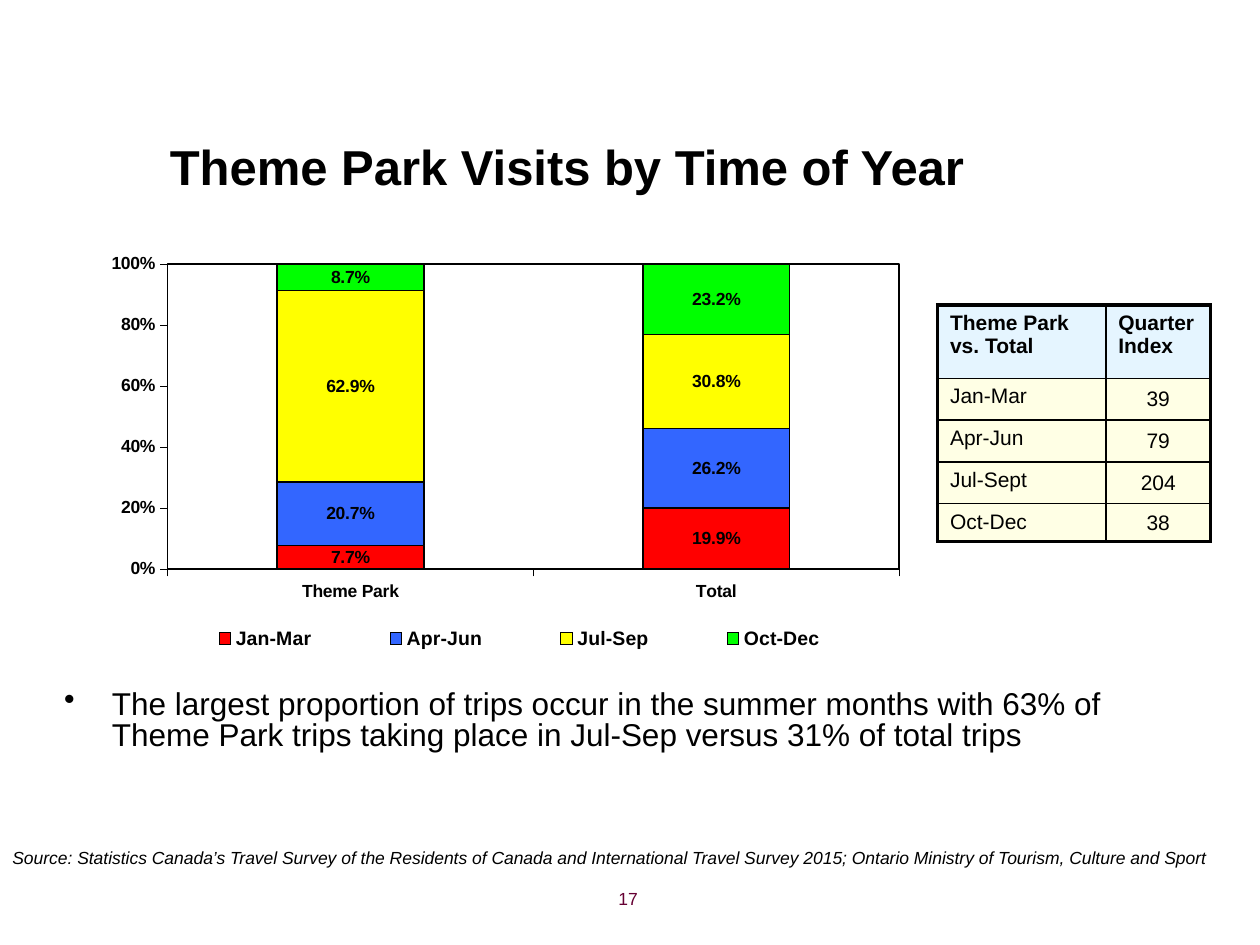
from dataclasses import dataclass

from lxml import etree
from pptx import Presentation
from pptx.chart.data import CategoryChartData
from pptx.dml.color import RGBColor
from pptx.enum.chart import XL_CHART_TYPE, XL_LEGEND_POSITION, XL_TICK_MARK
from pptx.enum.text import MSO_ANCHOR, PP_ALIGN
from pptx.oxml import parse_xml
from pptx.oxml.ns import nsdecls, qn
from pptx.util import Inches, Pt

LEFT, CENTER, RIGHT = PP_ALIGN.LEFT, PP_ALIGN.CENTER, PP_ALIGN.RIGHT
TOP, MIDDLE = MSO_ANCHOR.TOP, MSO_ANCHOR.MIDDLE
STACKED_100 = XL_CHART_TYPE.COLUMN_STACKED_100
BOTTOM = XL_LEGEND_POSITION.BOTTOM
OUTSIDE = XL_TICK_MARK.OUTSIDE


@dataclass(frozen=True)
class Theme:
    font: str = "Arial"
    ink: str = "000000"
    number: str = "660033"
    header: str = "CCECFF"
    body: str = "FFFFCC"
    quarters: tuple = ("FF0000", "3366FF", "FFFF00", "00FF00")
    title_size: float = 28
    bullet_size: float = 18
    table_size: float = 12
    legend_size: float = 11.1
    small_size: float = 10
    thin: float = 0.25
    line: float = 1
    frame: float = 2.25


THEME = Theme()
WIDTH, HEIGHT = Inches(10), Inches(7.5)

SHARES = {
    "Jan-Mar": (0.077, 0.199),
    "Apr-Jun": (0.207, 0.262),
    "Jul-Sep": (0.629, 0.308),
    "Oct-Dec": (0.087, 0.232),
}
INDEX_ROWS = [
    ("Theme Park vs. Total", "Quarter Index"),
    ("Jan-Mar", "39"),
    ("Apr-Jun", "79"),
    ("Jul-Sept", "204"),
    ("Oct-Dec", "38"),
]


def area(left, top, width, height):
    return (int(WIDTH * left / 100), int(HEIGHT * top / 100),
            int(WIDTH * width / 100), int(HEIGHT * height / 100))


def format_font(font, size, bold=False, italic=False, color=THEME.ink):
    font.name, font.size = THEME.font, Pt(size)
    font.bold, font.italic = bold, italic
    font.color.rgb = RGBColor.from_string(color)


def write(tf, text, size, align=LEFT, anchor=TOP, bullet=False, **style):
    tf.word_wrap = True
    tf.vertical_anchor = anchor
    p = tf.paragraphs[0]
    p.alignment = align
    if bullet:
        pPr = p._p.get_or_add_pPr()
        pPr.set("marL", str(Inches(0.38)))
        pPr.set("indent", str(Inches(-0.38)))
        etree.SubElement(pPr, qn("a:buChar")).set("char", "•")
        p.line_spacing = 0.8
    r = p.add_run()
    r.text = text
    format_font(r.font, size, **style)


def add_text(s, box, text, size, **style):
    write(s.shapes.add_textbox(*box).text_frame, text, size, **style)


def add_title(s, box, text):
    title = s.shapes.title
    title.left, title.top, title.width, title.height = box
    write(title.text_frame, text, THEME.title_size, align=CENTER,
          anchor=MIDDLE, bold=True)


def outline(line, width):
    line.color.rgb = RGBColor.from_string(THEME.ink)
    line.width = Pt(width)


def layout_xml(x, y, w, h, inner=False):
    target = '<c:layoutTarget val="inner"/>' if inner else ""
    return parse_xml(
        f'<c:layout {nsdecls("c")}><c:manualLayout>{target}'
        '<c:xMode val="edge"/><c:yMode val="edge"/>'
        f'<c:x val="{x}"/><c:y val="{y}"/><c:w val="{w}"/><c:h val="{h}"/>'
        '</c:manualLayout></c:layout>')


def place_plot(chart):
    plot_area = chart._chartSpace.chart.plotArea
    for old in plot_area.findall(qn("c:layout")):
        plot_area.remove(old)
    plot_area.insert(0, layout_xml(0.105, 0.033, 0.884, 0.637, inner=True))
    plot_area.append(parse_xml(
        f'<c:spPr {nsdecls("c", "a")}><a:noFill/><a:ln w="{Pt(THEME.line)}">'
        f'<a:solidFill><a:srgbClr val="{THEME.ink}"/></a:solidFill></a:ln></c:spPr>'))


def add_legend(chart):
    chart.has_legend = True
    legend = chart.legend
    legend.position = BOTTOM
    legend.include_in_layout = False
    format_font(legend.font, THEME.legend_size, bold=True)
    element = legend._element
    for old in element.findall(qn("c:layout")):
        element.remove(old)
    element.find(qn("c:legendPos")).addnext(layout_xml(0.08, 0.78, 0.9, 0.07))


def add_quarter_chart(s, box):
    data = CategoryChartData(number_format="0.0%")
    data.categories = ["Theme Park", "Total"]
    for name, values in SHARES.items():
        data.add_series(name, values)
    chart = s.shapes.add_chart(STACKED_100, *box, data).chart
    chart.has_title = False
    format_font(chart.font, THEME.small_size, bold=True)

    plot = chart.plots[0]
    plot.gap_width, plot.overlap, plot.vary_by_categories = 150, 100, False
    for series, color in zip(plot.series, THEME.quarters):
        series.format.fill.solid()
        series.format.fill.fore_color.rgb = RGBColor.from_string(color)
        outline(series.format.line, THEME.line)
        labels = series.data_labels
        labels.show_value = True
        labels.number_format, labels.number_format_is_linked = "0.0%", False
        format_font(labels.font, THEME.small_size, bold=True)

    for axis in (chart.category_axis, chart.value_axis):
        axis.major_tick_mark = OUTSIDE
        axis.has_major_gridlines = False
        outline(axis.format.line, THEME.thin)
        format_font(axis.tick_labels.font, THEME.small_size, bold=True)
    values = chart.value_axis
    values.minimum_scale, values.maximum_scale, values.major_unit = 0, 1, 0.2
    values.tick_labels.number_format = "0%"
    values.tick_labels.number_format_is_linked = False
    place_plot(chart)
    add_legend(chart)


def fill_cell(cell, color):
    cell.fill.solid()
    cell.fill.fore_color.rgb = RGBColor.from_string(color)
    rgb = cell._tc.tcPr.find(f".//{qn('a:srgbClr')}")
    etree.SubElement(rgb, qn("a:alpha")).set("val", "50000")


def border_cell(cell, **on_frame):
    for i, side in enumerate("LRTB"):
        width = THEME.frame if on_frame[side] else THEME.line
        cell._tc.tcPr.insert(i, parse_xml(
            f'<a:ln{side} {nsdecls("a")} w="{Pt(width)}"><a:solidFill>'
            f'<a:srgbClr val="{THEME.ink}"/></a:solidFill></a:ln{side}>'))


def add_index_table(s, box):
    widths, heights = (1.33, 0.83), (0.58, 0.33, 0.33, 0.33, 0.3)
    table = s.shapes.add_table(len(heights), len(widths), *box).table
    table.first_row = table.horz_banding = False
    for column, width in zip(table.columns, widths):
        column.width = int(box[2] * width / sum(widths))
    for row, height in zip(table.rows, heights):
        row.height = int(box[3] * height / sum(heights))
    for i, texts in enumerate(INDEX_ROWS):
        for j, text in enumerate(texts):
            cell = table.cell(i, j)
            header, value = i == 0, i > 0 and j == 1
            cell.margin_left = cell.margin_right = Inches(0 if value else 0.1)
            cell.margin_top = cell.margin_bottom = Inches(0 if value else 0.05)
            write(cell.text_frame, text, THEME.table_size, bold=header,
                  align=CENTER if value else LEFT)
            cell.vertical_anchor = MIDDLE if value else TOP
            fill_cell(cell, THEME.header if header else THEME.body)
            border_cell(cell, L=j == 0, R=j == len(widths) - 1,
                        T=header, B=i == len(heights) - 1)


def add_footer(s, source_box, number_box):
    add_text(s, number_box, "17", THEME.small_size, align=RIGHT, color=THEME.number)
    add_text(s, source_box,
             "Source: Statistics Canada’s Travel Survey of the Residents of Canada and "
             "International Travel Survey 2015; Ontario Ministry of Tourism, Culture and Sport",
             THEME.small_size, italic=True)


def main():
    prs = Presentation()
    prs.slide_width, prs.slide_height = WIDTH, HEIGHT
    s = prs.slides.add_slide(prs.slide_layouts[5])
    add_title(s, area(0, 12.93, 90, 9.2), "Theme Park Visits by Time of Year")
    add_text(s, area(4.1, 72.53, 89.8, 20),
             "The largest proportion of trips occur in the summer months with 63% of "
             "Theme Park trips taking place in Jul-Sep versus 31% of total trips",
             THEME.bullet_size, bullet=True)
    add_quarter_chart(s, area(6.4, 26.27, 65.7, 50.67))
    add_index_table(s, area(74.4, 32.27, 21.7, 25.07))
    add_footer(s, area(0, 88.93, 98, 3.6), area(28.3, 93.33, 23.3, 4.67))
    prs.save("out.pptx")


if __name__ == "__main__":
    main()
